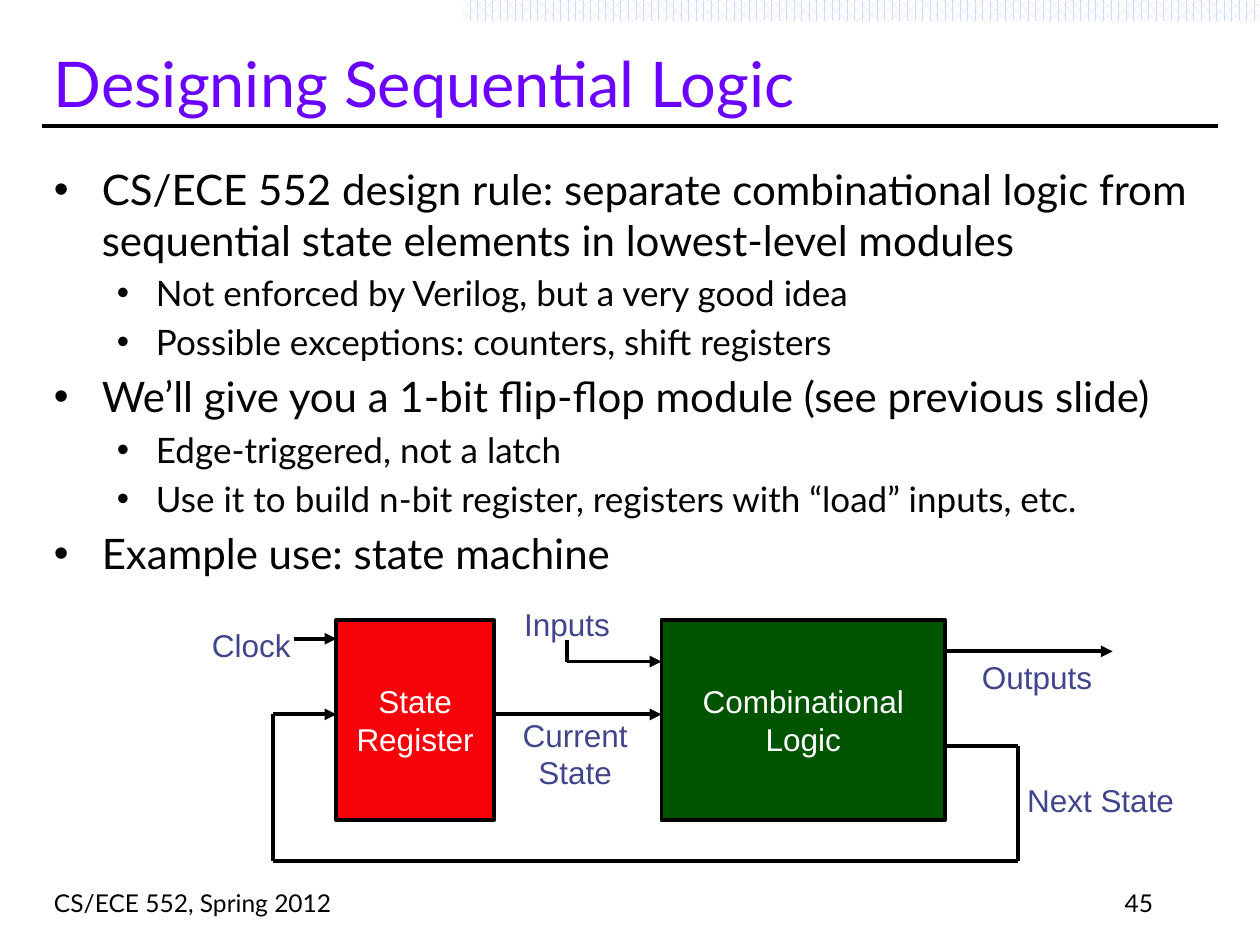
from dataclasses import dataclass

from lxml.etree import SubElement
from pptx import Presentation
from pptx.dml.color import RGBColor
from pptx.enum.dml import MSO_PATTERN
from pptx.enum.shapes import MSO_CONNECTOR, MSO_SHAPE
from pptx.enum.text import MSO_ANCHOR, MSO_AUTO_SIZE, PP_ALIGN
from pptx.oxml.ns import qn
from pptx.util import Inches, Pt


@dataclass(frozen=True)
class Theme:
    text_font: str = "Lato"
    diagram_font: str = "Arial"
    title: str = "6B02FF"
    body: str = "030305"
    black: str = "000000"
    white: str = "FFFFFF"
    label: str = "40458C"
    register: str = "F7020B"
    logic: str = "005400"
    stripe: str = "CFDBFD"
    title_size: int = 36
    body_sizes: tuple = (24, 20)
    diagram_size: int = 18
    footer_size: int = 14
    line_width: float = 2.25


THEME = Theme()

# Level and wording of each bullet
BULLETS = [
    (0, "CS/ECE 552 design rule: separate combinational logic from "
        "sequential state elements in lowest-level modules"),
    (1, "Not enforced by Verilog, but a very good idea"),
    (1, "Possible exceptions: counters, shift registers"),
    (0, "We’ll give you a 1-bit flip-flop module (see previous slide)"),
    (1, "Edge-triggered, not a latch"),
    (1, "Use it to build n-bit register, registers with “load” inputs, etc."),
    (0, "Example use: state machine"),
]
BULLET_INDENTS = [(0.38, -0.38), (0.81, -0.31)]

# Diagram edges and signal heights
REGISTER_LEFT, REGISTER_RIGHT = 2.67, 3.92
LOGIC_LEFT, LOGIC_RIGHT = 5.25, 7.5
BLOCK_TOP, BLOCK_HEIGHT = 4.92, 1.59
STATE_Y, OUTPUT_Y, NEXT_Y, FEEDBACK_Y = 5.67, 5.17, 5.92, 6.83
FEEDBACK_LEFT, FEEDBACK_RIGHT = 2.17, 8.08
CLOCK_Y = 5.07
INPUT_X, INPUT_Y = 4.5, 5.25


def color(value):
    return RGBColor.from_string(value)


def write(paragraph, text, *, size, font, ink, align=PP_ALIGN.LEFT):
    """Fill a paragraph; a vertical tab in the text is a line break."""
    paragraph.text = text
    paragraph.alignment = align
    for run in paragraph.runs:
        run.font.size = Pt(size)
        run.font.name = font
        run.font.color.rgb = color(ink)


def add_text_frame(slide, box, anchor, wrap=True):
    frame = slide.shapes.add_textbox(*map(Inches, box)).text_frame
    frame.word_wrap = wrap
    frame.vertical_anchor = anchor
    return frame


def add_line(slide, start, end, arrow=False):
    line = slide.shapes.add_connector(
        MSO_CONNECTOR.STRAIGHT, *map(Inches, start + end))
    line.line.color.rgb = color(THEME.black)
    line.line.width = Pt(THEME.line_width)
    if arrow:
        SubElement(line.line._get_or_add_ln(), qn("a:tailEnd"), type="triangle")
    SubElement(line._element.spPr, qn("a:effectLst"))


def add_path(slide, *points):
    """Join the points with straight lines and end in an arrowhead."""
    for start, end in zip(points, points[1:]):
        add_line(slide, start, end, arrow=end == points[-1])


def add_rectangle(slide, box):
    rectangle = slide.shapes.add_shape(MSO_SHAPE.RECTANGLE, *map(Inches, box))
    rectangle.shadow.inherit = False
    return rectangle


def add_block(slide, left, right, text, fill):
    block = add_rectangle(slide, (left, BLOCK_TOP, right - left, BLOCK_HEIGHT))
    block.fill.solid()
    block.fill.fore_color.rgb = color(fill)
    block.line.color.rgb = color(THEME.black)
    block.line.width = Pt(THEME.line_width)
    block.text_frame.vertical_anchor = MSO_ANCHOR.MIDDLE
    write(block.text_frame.paragraphs[0], text, size=THEME.diagram_size,
          font=THEME.diagram_font, ink=THEME.white, align=PP_ALIGN.CENTER)


def add_label(slide, box, text):
    frame = add_text_frame(slide, box, MSO_ANCHOR.MIDDLE, wrap=False)
    frame.auto_size = MSO_AUTO_SIZE.SHAPE_TO_FIT_TEXT
    write(frame.paragraphs[0], text, size=THEME.diagram_size,
          font=THEME.diagram_font, ink=THEME.label, align=PP_ALIGN.CENTER)


def add_bullet(paragraph, level, text):
    write(paragraph, text, size=THEME.body_sizes[level],
          font=THEME.text_font, ink=THEME.body)
    paragraph.level = level
    margin, indent = BULLET_INDENTS[level]
    properties = paragraph._p.get_or_add_pPr()
    properties.set("marL", str(Inches(margin)))
    properties.set("indent", str(Inches(indent)))
    space_before = SubElement(properties, qn("a:spcBef"))
    SubElement(space_before, qn("a:spcPct"), val="20000")
    bullet_color = SubElement(properties, qn("a:buClr"))
    SubElement(bullet_color, qn("a:srgbClr"), val=THEME.body)
    SubElement(properties, qn("a:buFont"), typeface=THEME.diagram_font)
    SubElement(properties, qn("a:buChar"), char="•")


def add_header(slide):
    stripe = add_rectangle(slide, (3.67, 0, 6.33, 0.17))
    stripe.fill.patterned()
    stripe.fill.pattern = MSO_PATTERN.PERCENT_60
    stripe.fill.fore_color.rgb = color(THEME.stripe)
    stripe.fill.back_color.rgb = color(THEME.white)
    stripe.line.fill.background()
    add_line(slide, (0.33, 1), (9.67, 1))
    title = add_text_frame(slide, (0.33, 0.25, 9.33, 0.75), MSO_ANCHOR.BOTTOM)
    write(title.paragraphs[0], "Designing Sequential Logic",
          size=THEME.title_size, font=THEME.text_font, ink=THEME.title)


def add_footer(slide):
    for left, width, text, align in [
        (0.33, 6.25, "CS/ECE 552, Spring 2012", PP_ALIGN.LEFT),
        (7.17, 2.08, "45", PP_ALIGN.RIGHT),
    ]:
        footer = add_text_frame(slide, (left, 7, width, 0.33), MSO_ANCHOR.BOTTOM)
        write(footer.paragraphs[0], text, size=THEME.footer_size,
              font=THEME.text_font, ink=THEME.black, align=align)


def add_bullets(slide):
    body = add_text_frame(slide, (0.33, 1.25, 9.33, 5.58), MSO_ANCHOR.TOP)
    for number, (level, text) in enumerate(BULLETS):
        paragraph = body.add_paragraph() if number else body.paragraphs[0]
        add_bullet(paragraph, level, text)


def add_state_machine(slide):
    add_block(slide, LOGIC_LEFT, LOGIC_RIGHT, "Combinational\vLogic", THEME.logic)
    add_block(slide, REGISTER_LEFT, REGISTER_RIGHT, "State\vRegister", THEME.register)

    add_path(slide, (REGISTER_RIGHT, STATE_Y), (LOGIC_LEFT, STATE_Y))
    add_path(slide, (LOGIC_RIGHT, OUTPUT_Y), (8.83, OUTPUT_Y))
    add_path(slide, (LOGIC_RIGHT, NEXT_Y), (FEEDBACK_RIGHT, NEXT_Y),
             (FEEDBACK_RIGHT, FEEDBACK_Y), (FEEDBACK_LEFT, FEEDBACK_Y),
             (FEEDBACK_LEFT, STATE_Y), (REGISTER_LEFT, STATE_Y))
    add_path(slide, (2.33, CLOCK_Y), (REGISTER_LEFT, CLOCK_Y))
    add_path(slide, (INPUT_X, 5.08), (INPUT_X, INPUT_Y), (LOGIC_LEFT, INPUT_Y))

    add_label(slide, (7.69, 5.17, 1.08, 0.4), "Outputs")
    add_label(slide, (8.05, 6.15, 1.37, 0.4), "Next State")
    add_label(slide, (4.03, 5.63, 1.07, 0.7), "Current\vState")
    add_label(slide, (1.58, 4.92, 0.83, 0.4), "Clock")
    add_label(slide, (4.06, 4.75, 0.88, 0.4), "Inputs")


def main():
    presentation = Presentation()
    presentation.slide_width = Inches(10)
    presentation.slide_height = Inches(7.5)
    slide = presentation.slides.add_slide(presentation.slide_layouts[6])
    add_header(slide)
    add_footer(slide)
    add_bullets(slide)
    add_state_machine(slide)
    presentation.save("out.pptx")


if __name__ == "__main__":
    main()
